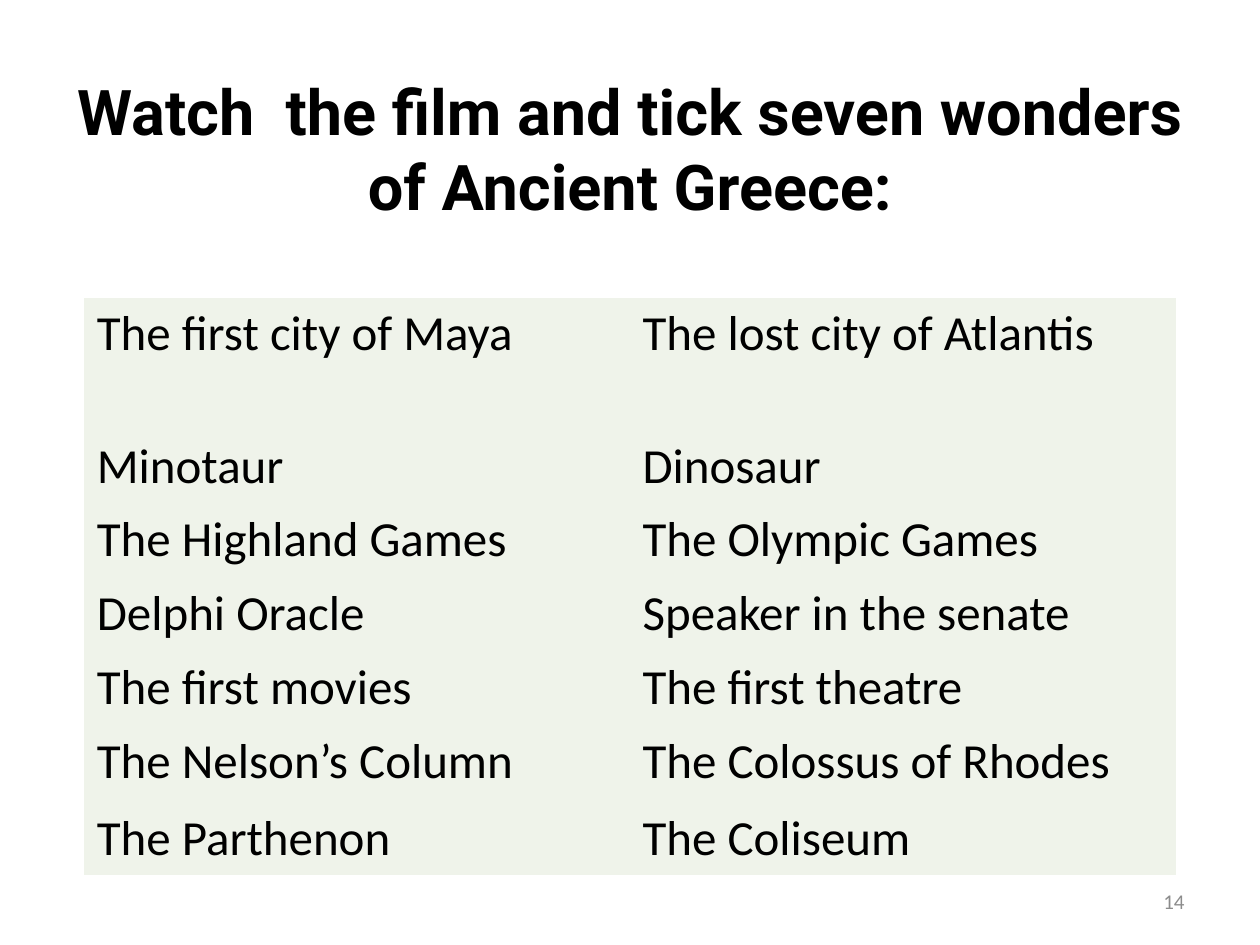
from pptx import Presentation
from pptx import util as u
from pptx.dml.color import RGBColor
from pptx.enum import text

COLOURS = {"ink": "000000", "cell": "EFF3EA", "number": "8C8C8C"}

WONDERS = [
    ("The first city of Maya", "The lost city of Atlantis"),
    ("Minotaur", "Dinosaur"),
    ("The Highland Games", "The Olympic Games"),
    ("Delphi Oracle", "Speaker in the senate"),
    ("The first movies", "The first theatre"),
    ("The Nelson’s Column", "The Colossus of Rhodes"),
    ("The Parthenon", "The Coliseum"),
]
ROW_HEIGHTS = [2.67, 1.49, 1.49, 1.49, 1.49, 1.54, 1.47]
COLUMN_WIDTH = 11


def add_run(paragraph, words, size, colour="ink", font="Calibri", bold=False):
    run = paragraph.add_run()
    run.text = words
    run.font.name = font
    run.font.size = u.Pt(size)
    run.font.bold = bold
    run.font.color.rgb = RGBColor.from_string(COLOURS[colour])


def set_title(slide, words):
    title = slide.shapes.title
    title.left, title.top = u.Cm(1.27), u.Cm(1)
    title.width, title.height = u.Cm(22.86), u.Cm(3.96)
    frame = title.text_frame
    frame.word_wrap = True
    frame.auto_size = text.MSO_AUTO_SIZE.NONE
    frame.vertical_anchor = text.MSO_ANCHOR.MIDDLE
    frame.margin_left = frame.margin_right = u.Cm(0.1)
    paragraph = frame.paragraphs[0]
    paragraph.alignment = text.PP_ALIGN.CENTER
    add_run(paragraph, words, 36, font="Roboto", bold=True)


def add_wonders_table(slide):
    frame = slide.shapes.add_table(
        len(WONDERS), 2, u.Cm(1.7), u.Cm(6),
        u.Cm(2 * COLUMN_WIDTH), u.Cm(sum(ROW_HEIGHTS)))
    table = frame.table
    table.first_row = table.horz_banding = False
    for column in table.columns:
        column.width = u.Cm(COLUMN_WIDTH)
    for row, height, wonders in zip(table.rows, ROW_HEIGHTS, WONDERS):
        row.height = u.Cm(height)
        for cell, wonder in zip(row.cells, wonders):
            cell.fill.solid()
            cell.fill.fore_color.rgb = RGBColor.from_string(COLOURS["cell"])
            add_run(cell.text_frame.paragraphs[0], wonder, 28)
    remove_borders(table)


def remove_borders(table):
    for cell in table.iter_cells():
        properties = cell._tc.get_or_add_tcPr()
        for position, side in enumerate(("lnL", "lnR", "lnT", "lnB")):
            line = properties.makeelement(
                "{http://schemas.openxmlformats.org/drawingml/2006/main}" + side, {"w": "0"})
            line.append(line.makeelement(
                "{http://schemas.openxmlformats.org/drawingml/2006/main}noFill", {}))
            properties.insert(position, line)


def add_page_number(slide, number):
    box = slide.shapes.add_textbox(u.Cm(18.2), u.Cm(17.65), u.Cm(5.93), u.Cm(1.02))
    frame = box.text_frame
    frame.word_wrap = True
    frame.vertical_anchor = text.MSO_ANCHOR.MIDDLE
    paragraph = frame.paragraphs[0]
    paragraph.alignment = text.PP_ALIGN.RIGHT
    add_run(paragraph, number, 12, "number")


def main():
    presentation = Presentation()
    presentation.slide_width, presentation.slide_height = u.Cm(25.4), u.Cm(19.05)
    slide = presentation.slides.add_slide(presentation.slide_layouts[5])
    set_title(slide, "Watch  the film and tick seven wonders of Ancient Greece:")
    add_wonders_table(slide)
    add_page_number(slide, "14")
    presentation.save("out.pptx")


if __name__ == "__main__":
    main()
